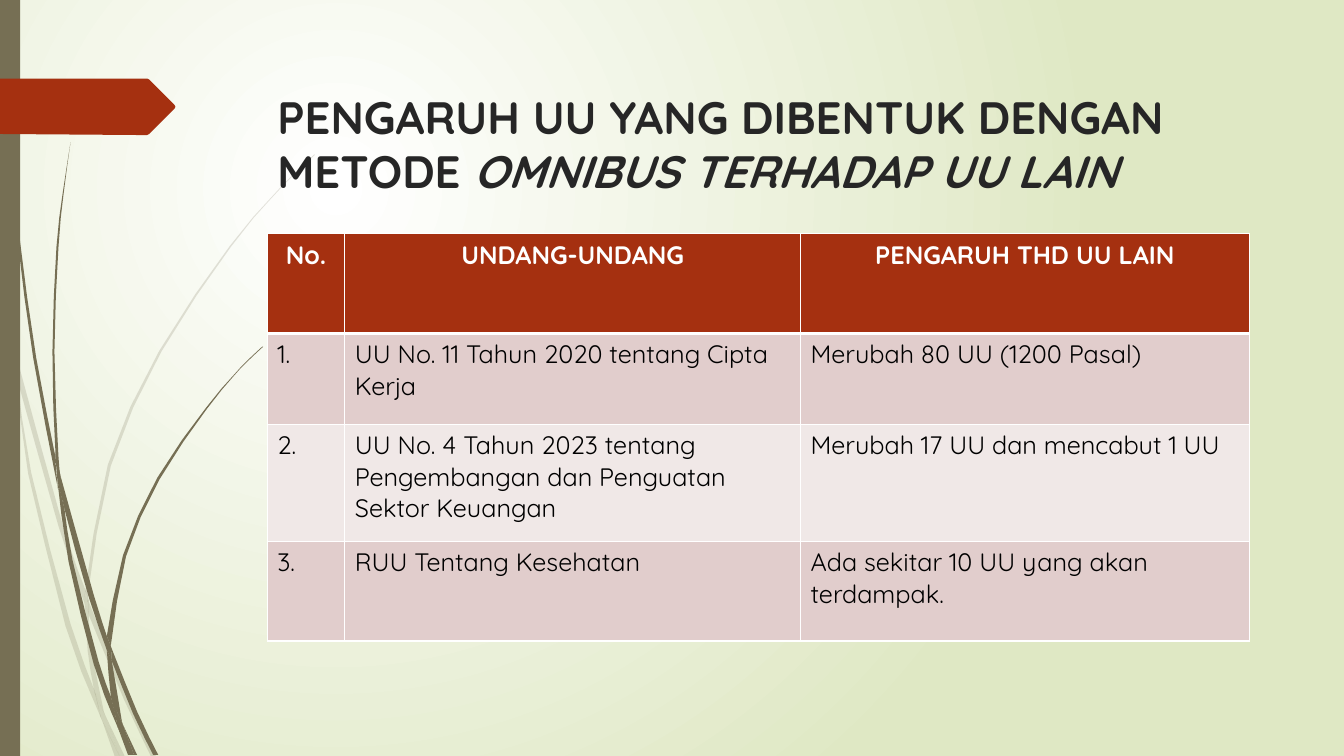
import pptx
import pptx.dml.color
import pptx.enum.shapes
import pptx.enum.text
import pptx.oxml
import pptx.oxml.ns
import pptx.util

Inches, Pt = pptx.util.Inches, pptx.util.Pt
RGBColor = pptx.dml.color.RGBColor
ALIGN, ANCHOR = pptx.enum.text.PP_ALIGN, pptx.enum.text.MSO_ANCHOR

TITLE_RUNS = [("PENGARUH UU YANG DIBENTUK DENGAN METODE ", False),
              ("OMNIBUS TERHADAP UU LAIN", True)]
TABLE_ROWS = [
    ("No.", "UNDANG-UNDANG", "PENGARUH THD UU LAIN"),
    ("1.", "UU No. 11 Tahun 2020 tentang Cipta Kerja", "Merubah 80 UU (1200 Pasal)"),
    ("2.", "UU No. 4 Tahun 2023 tentang Pengembangan dan Penguatan Sektor Keuangan",
     "Merubah 17 UU dan mencabut 1 UU"),
    ("3.", "RUU Tentang Kesehatan", "Ada sekitar 10 UU yang akan terdampak."),
]
COLUMN_WIDTHS = (0.77, 4.52, 4.45)
ROW_HEIGHTS = (0.99, 0.9, 1.16, 0.99)

FONT = "Quicksand"
WHITE = RGBColor(0xFF, 0xFF, 0xFF)
BLACK = RGBColor(0, 0, 0)
TITLE_GREY = RGBColor(0x26, 0x26, 0x26)
PALE_GREEN = RGBColor(0xDF, 0xE8, 0xC4)
OLIVE = RGBColor(0x76, 0x6F, 0x54)
RUST = RGBColor(0xA5, 0x30, 0x10)
BANDS = (RGBColor(0xE1, 0xCD, 0xCC), RGBColor(0xF0, 0xE8, 0xE7))

SLIDE_WIDTH, SLIDE_HEIGHT = 13.33, 7.5
CONTENT_LEFT = 2.65
UNITS_PER_INCH = 1000

# Each grass blade is one smooth edge out and one smooth edge back, in inches.
FAINT_GRASS = [
    ([(0.11, 3.5), (0.09, 3.22), (0, 2.82)], [(0, 2.99), (0.1, 3.44)]),
    ([(0.14, 3.45), (0.62, 5.2), (0.85, 5.86)],
     [(0.84, 5.99), (0.58, 5.22), (0.17, 3.76)]),
    ([(0.88, 5.96), (0.92, 6.07), (1.27, 6.92), (1.55, 7.51)],
     [(1.5, 7.51), (1.23, 6.94), (0.88, 6.1)]),
    ([(1.05, 7.11), (1.24, 7.51)], [(1.19, 7.51)]),
    ([(0.11, 3.5), (0.17, 3.76), (0.31, 4.69), (0.7, 6.19), (0.93, 6.83),
      (0.99, 7.07), (1.01, 7.14)],
     [(0.92, 6.93), (0.65, 6.21), (0.28, 4.7)]),
    ([(0.84, 5.99), (0.87, 6.46), (0.93, 6.83), (0.96, 6.92), (1.05, 7.11)],
     [(1.03, 7.06), (0.91, 6.46), (0.88, 6.1), (0.88, 6.08)]),
    ([(0.88, 5.96), (0.88, 5.84), (1.1, 4.62), (1.6, 3.49), (2.29, 2.45),
      (2.68, 1.98), (2.9, 1.75), (3.12, 1.54)],
     [(3.12, 1.53), (2.89, 1.75), (2.68, 1.97), (2.28, 2.44), (1.58, 3.48),
      (1.07, 4.61), (0.85, 5.84), (0.85, 5.86)]),
    ([(1.01, 7.14), (1.14, 7.51)], [(1.19, 7.51)]),
    ([(0.88, 6.1), (0.88, 5.96), (0.85, 5.86)], [(0.84, 5.99), (0.88, 6.08)]),
    ([(0.93, 6.83), (0.99, 7.07), (1.01, 7.14), (1.19, 7.51)],
     [(1.05, 7.11), (0.96, 6.92)]),
]
DARK_GRASS = [
    ([(0.03, 0), (0.04, 0.48), (0.07, 1.1), (0.17, 2.33), (0.33, 3.55),
      (0.56, 4.77), (0.57, 4.81)],
     [(0.55, 4.57), (0.55, 4.53), (0.36, 3.55), (0.19, 2.32), (0.08, 1.09),
      (0.05, 0.48), (0.04, 0)]),
    ([(0.6, 4.72), (0.64, 5.05), (0.88, 5.92), (1.06, 6.45)],
     [(1.06, 6.31), (0.93, 5.9), (0.6, 4.72)]),
    ([(1.1, 6.41), (1.13, 6.49), (1.36, 7.06), (1.57, 7.49)],
     [(1.52, 7.49), (1.32, 7.08), (1.11, 6.56)]),
    ([(0.57, 4.77), (0.64, 5.05), (0.72, 5.56), (0.98, 6.57), (1.1, 6.91),
      (1.16, 7.17), (1.17, 7.22)],
     [(1.11, 7.08), (0.93, 6.59), (0.68, 5.57), (0.57, 4.77)]),
    ([(0.6, 4.72), (0.58, 4.53), (0.54, 3.49), (0.58, 2.45), (0.63, 1.93), (0.7, 1.41)],
     [(0.7, 1.41), (0.62, 1.93), (0.56, 2.45), (0.52, 3.49), (0.55, 4.49), (0.6, 4.72)]),
    ([(1.22, 7.19), (1.36, 7.49)], [(1.33, 7.49)]),
    ([(0.55, 4.49), (0.6, 4.72), (0.64, 5.05)], [(0.57, 4.77), (0.55, 4.53)]),
    ([(1.1, 6.41), (1.11, 6.33), (1.25, 5.52), (1.58, 4.76), (2.05, 4.06),
      (2.31, 3.74), (2.45, 3.59), (2.61, 3.44)],
     [(2.6, 3.44), (2.45, 3.58), (2.31, 3.73), (2.04, 4.05), (1.56, 4.74),
      (1.22, 5.51), (1.06, 6.31)]),
    ([(1.17, 7.22), (1.27, 7.49)], [(1.31, 7.49)]),
    ([(1.06, 6.45), (1.1, 6.91), (1.16, 7.06), (1.22, 7.19)],
     [(1.21, 7.16), (1.11, 6.56), (1.09, 6.51)]),
    ([(1.06, 6.45), (1.09, 6.51), (1.11, 6.56)], [(1.1, 6.41), (1.06, 6.31)]),
    ([(1.1, 6.91), (1.16, 7.17), (1.17, 7.22), (1.3, 7.49)],
     [(1.33, 7.49), (1.22, 7.19), (1.16, 7.06)]),
]
BANNER = [(0, 0.78), (1.46, 0.78), (1.48, 0.79), (1.73, 1.04), (1.74, 1.06),
          (1.73, 1.08), (1.48, 1.33), (1.46, 1.34), (1.36, 1.34), (0, 1.33)]


def smooth_edge(points):
    """Add the midpoint of a Catmull-Rom curve between each two points."""
    padded = [points[0], *points, points[-1]]
    curve = [points[0]]
    for a, b, c, d in zip(padded, padded[1:], padded[2:], padded[3:]):
        middle = tuple((9 * (q + r) - p - s) / 16 for p, q, r, s in zip(a, b, c, d))
        curve += [middle, c]
    return curve


def paint(shape, color):
    shape.shadow.inherit = False
    shape.fill.solid()
    shape.fill.fore_color.rgb = color
    shape.line.fill.background()


def add_outline(shapes, points, color):
    start, *others = [(x * UNITS_PER_INCH, y * UNITS_PER_INCH) for x, y in points]
    builder = shapes.build_freeform(*start, scale=Inches(1) / UNITS_PER_INCH)
    builder.add_line_segments(others, close=True)
    shape = builder.convert_to_shape()
    paint(shape, color)
    return shape


def add_grass(slide, blades, opacity=None):
    group = slide.shapes.add_group_shape()
    for out_edge, back_edge in blades:
        outline = smooth_edge(out_edge) + smooth_edge(back_edge)
        blade = add_outline(group.shapes, outline, OLIVE)
        if opacity:
            color = blade.element.spPr.find(".//" + pptx.oxml.ns.qn("a:srgbClr"))
            color.append(pptx.oxml.parse_xml(
                f'<a:alpha {pptx.oxml.ns.nsdecls("a")} val="{opacity * 1000}"/>'))


def set_background(slide):
    fill = slide.background.fill
    fill.gradient()
    for stop, color in zip(fill.gradient_stops, (WHITE, PALE_GREEN)):
        stop.color.rgb = color
    linear = slide.element.find(".//" + pptx.oxml.ns.qn("a:lin"))
    linear.getparent().replace(linear, pptx.oxml.parse_xml(
        f'<a:path {pptx.oxml.ns.nsdecls("a")} path="circle">'
        '<a:fillToRect l="50000" t="50000" r="100000" b="100000"/></a:path>'))


def add_run(paragraph, text, size, color, bold, italic=False):
    run = paragraph.add_run()
    run.text = text
    run.font.name, run.font.size = FONT, Pt(size)
    run.font.bold, run.font.italic = bold, italic
    run.font.color.rgb = color


def set_borders(cell, top, bottom):
    properties = cell._tc.get_or_add_tcPr()
    for position, (side, width) in enumerate(
            [("L", 1), ("R", 1), ("T", top), ("B", bottom)]):
        properties.insert(position, pptx.oxml.parse_xml(
            f'<a:ln{side} {pptx.oxml.ns.nsdecls("a")} w="{Pt(width)}"><a:solidFill>'
            f'<a:srgbClr val="{WHITE}"/></a:solidFill></a:ln{side}>'))


def place_title(slide):
    title = slide.shapes.title
    title.left, title.top = Inches(CONTENT_LEFT), Inches(0.81)
    title.width, title.height = Inches(9.93), Inches(1.07)
    title.element.getparent().append(title.element)
    frame = title.text_frame
    frame.word_wrap, frame.auto_size = True, pptx.enum.text.MSO_AUTO_SIZE.NONE
    frame.vertical_anchor, frame.margin_top = ANCHOR.TOP, Inches(0.07)
    paragraph = frame.paragraphs[0]
    paragraph.alignment, paragraph.line_spacing = ALIGN.LEFT, 1.0
    for text, italic in TITLE_RUNS:
        add_run(paragraph, text, 32.4, TITLE_GREY, True, italic)


def add_law_table(slide):
    table = slide.shapes.add_table(
        len(ROW_HEIGHTS), len(COLUMN_WIDTHS), Inches(CONTENT_LEFT), Inches(2.32),
        Inches(sum(COLUMN_WIDTHS)), Inches(sum(ROW_HEIGHTS))).table
    for column, width in zip(table.columns, COLUMN_WIDTHS):
        column.width = Inches(width)
    for index, (row, height, texts) in enumerate(zip(table.rows, ROW_HEIGHTS, TABLE_ROWS)):
        row.height = Inches(height)
        header = index == 0
        for cell, text in zip(row.cells, texts):
            cell.fill.solid()
            cell.fill.fore_color.rgb = RUST if header else BANDS[(index - 1) % 2]
            set_borders(cell, top=3 if index == 1 else 1, bottom=3 if header else 1)
            paragraph = cell.text_frame.paragraphs[0]
            paragraph.alignment = ALIGN.CENTER if header else ALIGN.LEFT
            add_run(paragraph, text, 18, WHITE if header else BLACK, header)


def main():
    presentation = pptx.Presentation()
    presentation.slide_width = Inches(SLIDE_WIDTH)
    presentation.slide_height = Inches(SLIDE_HEIGHT)
    slide = presentation.slides.add_slide(presentation.slide_layouts.get_by_name("Title Only"))
    set_background(slide)
    add_grass(slide, FAINT_GRASS, opacity=20)
    add_grass(slide, DARK_GRASS)
    side_bar = slide.shapes.add_shape(pptx.enum.shapes.MSO_SHAPE.RECTANGLE, 0, 0,
                                      Inches(0.2), Inches(SLIDE_HEIGHT))
    paint(side_bar, OLIVE)
    add_outline(slide.shapes, BANNER, RUST)
    place_title(slide)
    add_law_table(slide)
    presentation.save("out.pptx")


if __name__ == "__main__":
    main()
